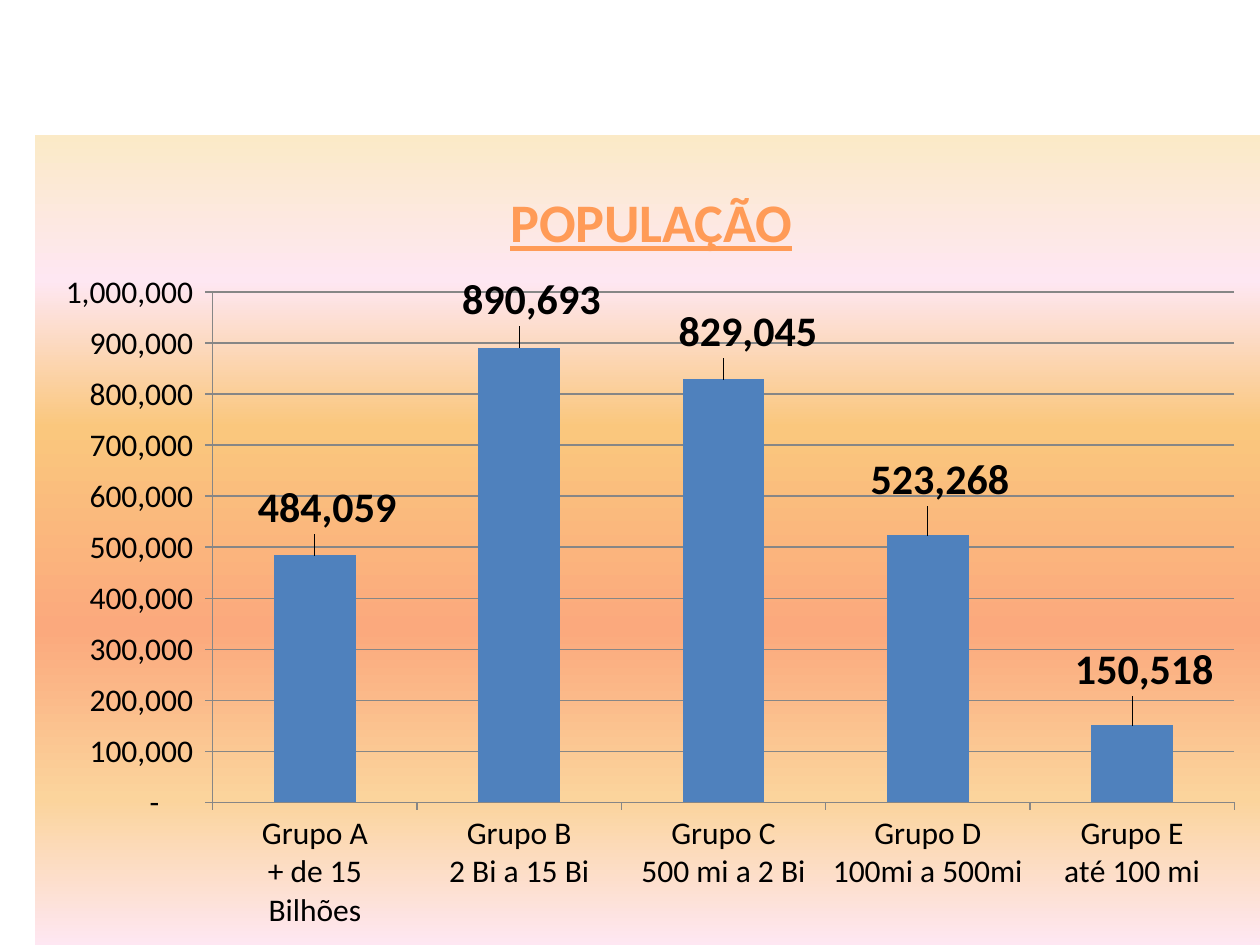
from dataclasses import dataclass

import pptx
import pptx.chart.data
import pptx.dml.color
import pptx.enum.chart
import pptx.oxml
import pptx.oxml.ns
import pptx.util
from pptx.util import Cm

BLACK = pptx.dml.color.RGBColor(0x00, 0x00, 0x00)
ORANGE = pptx.dml.color.RGBColor(0xFF, 0x9B, 0x57)
BLUE = pptx.dml.color.RGBColor(0x4F, 0x81, 0xBD)
GRAY = pptx.dml.color.RGBColor(0x86, 0x86, 0x86)
RGBColor = pptx.dml.color.RGBColor
BACKGROUND_STOPS = [
    (0, RGBColor(0xFB, 0xEA, 0xC7)),
    (18, RGBColor(0xFE, 0xE7, 0xF2)),
    (36, RGBColor(0xFA, 0xC7, 0x7D)),
    (61, RGBColor(0xFB, 0xA9, 0x7D)),
    (82, RGBColor(0xFB, 0xD4, 0x9C)),
    (100, RGBColor(0xFE, 0xE7, 0xF2)),
]
FONT = "Calibri"
NUMBER_FORMAT = '_-* #,##0_-;\\-* #,##0_-;_-* "-"??_-;_-@_'


@dataclass
class Group:
    label: str
    population: int
    shift_x: float  # label offset, as a share of the chart
    shift_y: float


GROUPS = [
    Group("Grupo A\n+ de 15\nBilhões", 484059, 0.01, -0.02),
    Group("Grupo B\n2 Bi a 15 Bi", 890693, 0.01, -0.02),
    Group("Grupo C\n500 mi a 2 Bi", 829045, 0.02, -0.02),
    Group("Grupo D\n100mi a 500mi", 523268, 0.01, -0.03),
    Group("Grupo E\naté 100 mi", 150518, 0.01, -0.03),
]


def format_font(font, *, size: float, color: RGBColor = BLACK,
                bold: bool = False, underline: bool = False) -> None:
    font.name = FONT
    font.size = pptx.util.Pt(size)
    font.bold = bold
    font.underline = underline
    font.color.rgb = color


def write_text(frame, text: str, **text_format) -> None:
    run = frame.paragraphs[0].add_run()
    run.text = text
    format_font(run.font, **text_format)


def layout_xml(target: str = "", **places: float):
    """Build a manual layout from shares of the chart's size."""
    modes = "".join(f'<c:{axis}Mode val="edge"/>' for axis in "xy") if target else ""
    inner = '<c:layoutTarget val="inner"/>' if target == "inner" else ""
    values = "".join(f'<c:{key} val="{value}"/>' for key, value in places.items())
    return pptx.oxml.parse_xml(
        f'<c:layout {pptx.oxml.ns.nsdecls("c")}><c:manualLayout>'
        f"{inner}{modes}{values}</c:manualLayout></c:layout>")


def place(element, layout, after: str = "") -> None:
    """Put a layout first in an element, or after the named child."""
    for old in element.findall(pptx.oxml.ns.qn("c:layout")):
        element.remove(old)
    if after:
        element.find(pptx.oxml.ns.qn(after)).addnext(layout)
    else:
        element.insert(0, layout)


def fill_chart_background(chart) -> None:
    stops = "".join(
        f'<a:gs pos="{percent * 1000}"><a:srgbClr val="{color}"/></a:gs>'
        for percent, color in BACKGROUND_STOPS)
    background = pptx.oxml.parse_xml(
        f'<c:spPr {pptx.oxml.ns.nsdecls("c", "a")}><a:gradFill><a:gsLst>{stops}'
        '</a:gsLst><a:lin ang="5400000" scaled="0"/></a:gradFill>'
        "<a:ln><a:noFill/></a:ln></c:spPr>")
    chart.element.find(pptx.oxml.ns.qn("c:chart")).addnext(background)


def style_axis(axis) -> None:
    axis.major_tick_mark = pptx.enum.chart.XL_TICK_MARK.OUTSIDE
    axis.minor_tick_mark = pptx.enum.chart.XL_TICK_MARK.NONE
    axis.format.line.color.rgb = GRAY
    axis.format.line.width = pptx.util.Pt(0.75)
    format_font(axis.tick_labels.font, size=18)


def add_population_chart(slide) -> None:
    population = pptx.chart.data.CategoryChartData(number_format=NUMBER_FORMAT)
    population.categories = [group.label for group in GROUPS]
    population.add_series("Series 1", [group.population for group in GROUPS])
    chart = slide.shapes.add_chart(
        pptx.enum.chart.XL_CHART_TYPE.COLUMN_CLUSTERED,
        Cm(0.71), Cm(2.72), Cm(24.69), Cm(16.33), population).chart
    format_font(chart.font, size=18)
    chart.has_legend = False
    fill_chart_background(chart)

    # Title
    title = chart.chart_title
    write_text(title.text_frame, "POPULAÇÃO", size=31, color=ORANGE,
               bold=True, underline=True)
    title.include_in_layout = False
    place(title._element, layout_xml("outer", x=0.38, y=0.05), after="c:tx")

    # Axes
    style_axis(chart.category_axis)
    scale = chart.value_axis
    style_axis(scale)
    scale.minimum_scale, scale.maximum_scale, scale.major_unit = 0, 1000000, 100000
    scale.tick_labels.number_format = NUMBER_FORMAT
    scale.tick_labels.number_format_is_linked = False
    scale.major_gridlines.format.line.color.rgb = GRAY
    scale.major_gridlines.format.line.width = pptx.util.Pt(0.75)

    # Columns and their values
    plot = chart.plots[0]
    plot.gap_width = 150
    plot.vary_by_categories = False
    columns = plot.series[0]
    columns.format.fill.solid()
    columns.format.fill.fore_color.rgb = BLUE
    labels = columns.data_labels
    labels.show_value = True
    labels.number_format = NUMBER_FORMAT
    labels.number_format_is_linked = False
    format_font(labels.font, size=24, bold=True)
    for index, group in enumerate(GROUPS):
        label = columns.points[index].data_label
        format_font(label.font, size=24, bold=True)
        label.position = pptx.enum.chart.XL_LABEL_POSITION.OUTSIDE_END
        entry = labels._element.findall(pptx.oxml.ns.qn("c:dLbl"))[index]
        place(entry, layout_xml(x=group.shift_x, y=group.shift_y), after="c:idx")

    plot_area = chart.element.find(".//" + pptx.oxml.ns.qn("c:plotArea"))
    place(plot_area, layout_xml("inner", x=0.145, y=0.194, w=0.834, h=0.63))


def main() -> None:
    deck = pptx.Presentation()
    deck.slide_width, deck.slide_height = Cm(25.4), Cm(19.05)
    add_population_chart(deck.slides.add_slide(deck.slide_layouts[6]))
    deck.save("out.pptx")


if __name__ == "__main__":
    main()
